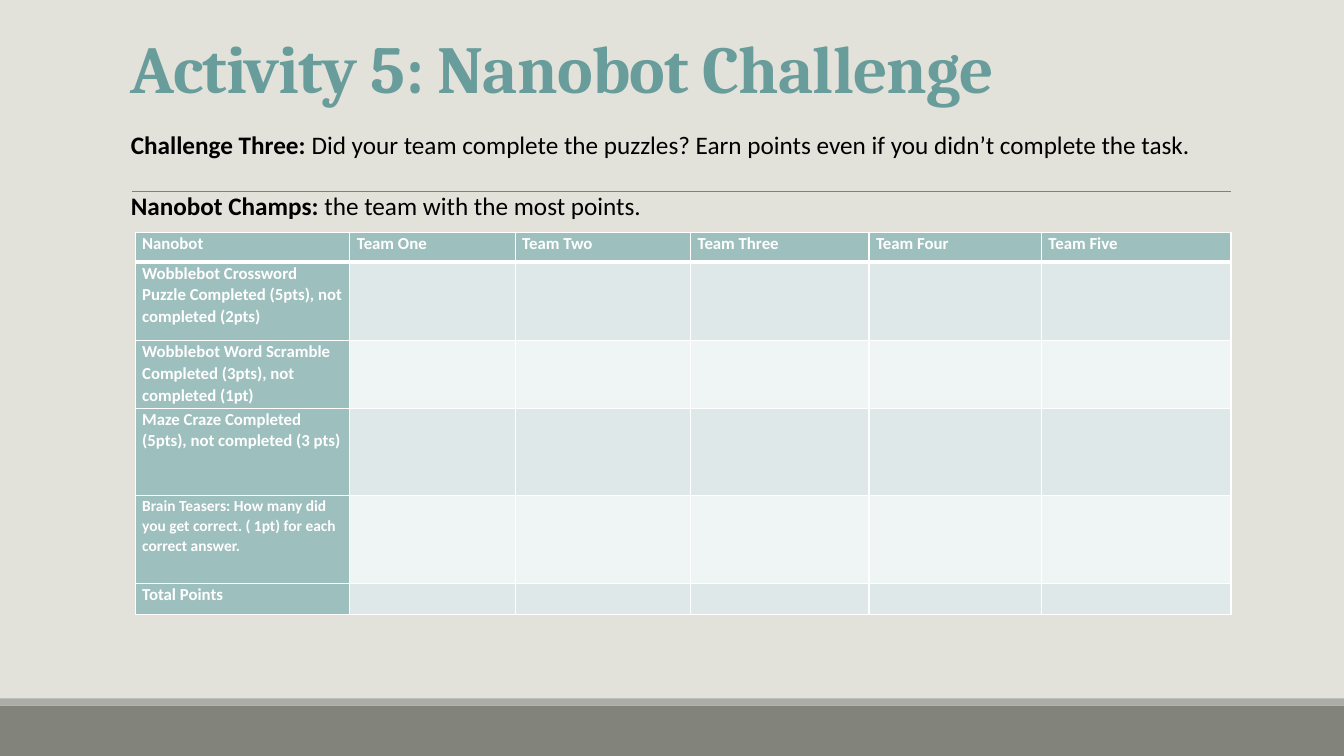
from lxml.etree import SubElement
from pptx import Presentation
from pptx.dml.color import RGBColor
from pptx.enum.shapes import MSO_CONNECTOR, MSO_SHAPE
from pptx.enum.text import MSO_ANCHOR
from pptx.oxml.ns import qn
from pptx.util import Inches, Pt


def color(code):
    return RGBColor.from_string(code)


def add_run(para, text, size, code, bold=True, font="Calibri"):
    run = para.add_run()
    run.text = text
    run.font.size = Pt(size)
    run.font.name = font
    run.font.bold = bold
    run.font.color.rgb = color(code)
    return run


deck = Presentation()
deck.slide_width, deck.slide_height = Inches(13.33), Inches(7.5)
slide = deck.slides.add_slide(deck.slide_layouts[6])
slide.background.fill.solid()
slide.background.fill.fore_color.rgb = color("E2E2DB")
shapes = slide.shapes

# Footer bands and divider
for top, height, code in [(7, 0.5, "82847C"), (6.93, 0.07, "ACADA8")]:
    band = shapes.add_shape(MSO_SHAPE.RECTANGLE, 0, Inches(top),
                            Inches(13.33), Inches(height))
    band.shadow.inherit = False
    band.fill.solid()
    band.fill.fore_color.rgb = color(code)
    band.line.fill.background()

rule = shapes.add_connector(MSO_CONNECTOR.STRAIGHT, Inches(1.31), Inches(1.9),
                            Inches(12.21), Inches(1.9))
rule.line.color.rgb = color("808080")
rule.line.width = Pt(0.5)
SubElement(rule._element.spPr, qn("a:effectLst"))

# Title
title = shapes.add_textbox(Inches(1.2), Inches(0.31), Inches(11), Inches(0.8)).text_frame
title.word_wrap = True
title.vertical_anchor = MSO_ANCHOR.BOTTOM
title.paragraphs[0].line_spacing = 0.85
run = add_run(title.paragraphs[0], "Activity 5: Nanobot Challenge", 48, "689D9B", font="Cambria")
run._r.get_or_add_rPr().set("spc", "-50")

# Score table
heads = ["Nanobot", "Team One", "Team Two", "Team Three", "Team Four", "Team Five"]
tasks = [
    "Wobblebot Crossword Puzzle Completed (5pts), not completed (2pts)",
    "Wobblebot Word Scramble Completed (3pts), not completed (1pt)",
    "Maze Craze Completed (5pts), not completed (3 pts)",
    "Brain Teasers: How many did you get correct. ( 1pt) for each correct answer.",
    "Total Points",
]
widths = [2.13, 1.64, 1.74, 1.77, 1.71, 1.88]
heights = [0.29, 0.78, 0.67, 0.87, 0.87, 0.31]
table = shapes.add_table(6, 6, Inches(1.34), Inches(2.31),
                         Inches(sum(widths)), Inches(sum(heights))).table
for col, width in zip(table.columns, widths):
    col.width = Inches(width)
for r, height in enumerate(heights):
    table.rows[r].height = Inches(height)
    for c, head in enumerate(heads):
        cell = table.cell(r, c)
        cell.margin_left = cell.margin_right = Inches(0.07)
        cell.margin_top = cell.margin_bottom = 0

        # The line under the header row is thicker
        props = cell._tc.get_or_add_tcPr()
        for side in "LRTB":
            thick = (r, side) in [(0, "B"), (1, "T")]
            edge = SubElement(props, qn(f"a:ln{side}"), w=str(Pt(3 if thick else 1)))
            paint = SubElement(edge, qn("a:solidFill"))
            SubElement(paint, qn("a:srgbClr"), val="FFFFFF")

        label = r == 0 or c == 0
        cell.fill.solid()
        cell.fill.fore_color.rgb = color("9DBFBE" if label else "DFE8E8" if r % 2 else "EFF4F4")
        if label:
            para = cell.text_frame.paragraphs[0]
            para.line_spacing = 1.06
            add_run(para, tasks[r - 1] if r else head, 11 if r == 4 else 12, "FFFFFF")

# Instructions
notes = [
    ("Challenge Three: ",
     "Did your team complete the puzzles? Earn points even if you didn’t complete the task."),
    ("Nanobot Champs: ", "the team with the most points."),
]
frame = shapes.add_textbox(Inches(1.2), Inches(1.23), Inches(10.83), Inches(1.01)).text_frame
frame.word_wrap = True
for i, (lead, text) in enumerate(notes):
    para = frame.add_paragraph() if i else frame.paragraphs[0]
    para.space_before = Pt(22 * i)
    add_run(para, lead, 18, "000000")
    add_run(para, text, 18, "000000", bold=False)

deck.save("out.pptx")
